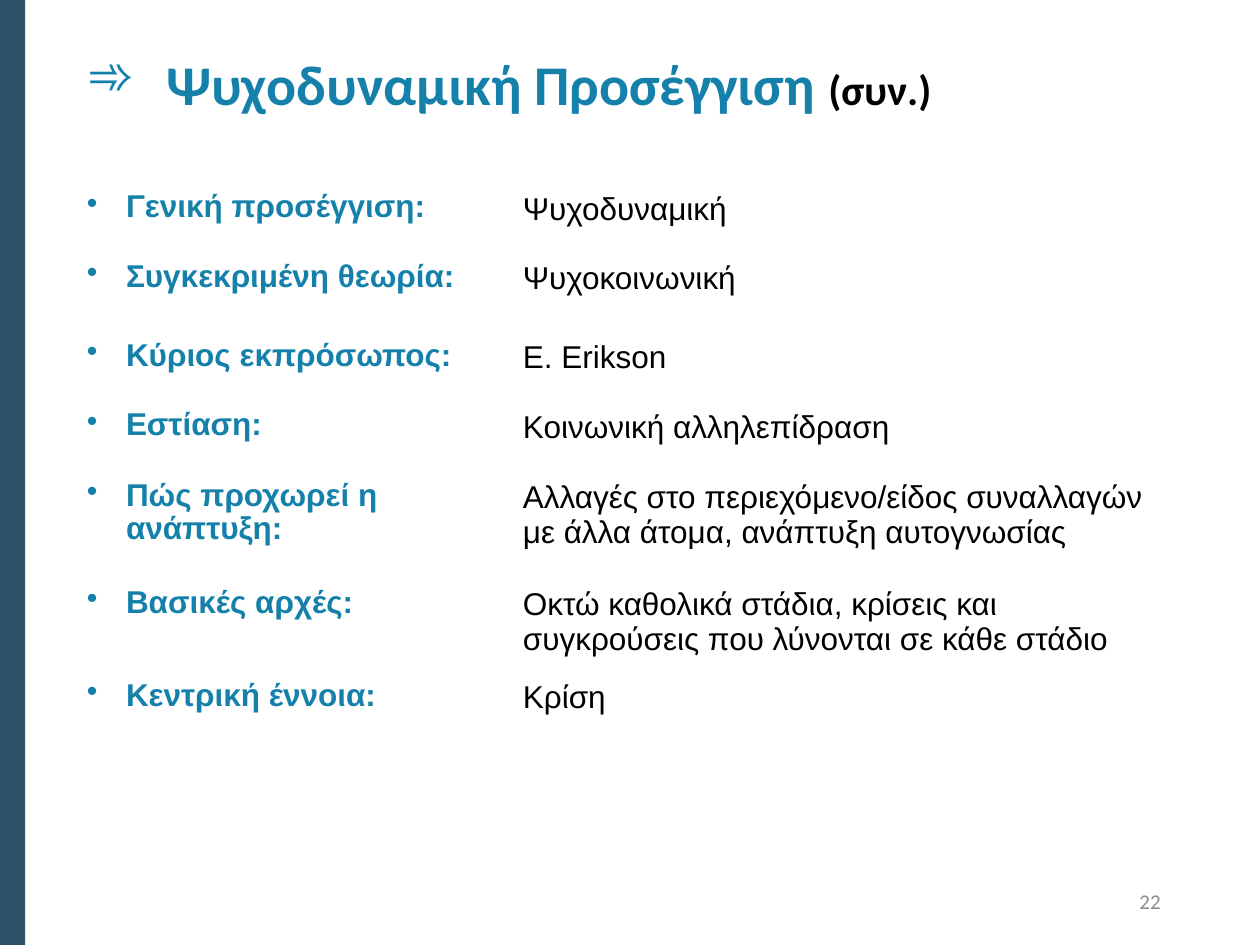
"""Build a slide that sums up the psychodynamic approach in a table."""
from lxml import etree
from pptx import Presentation, util as u
from pptx.dml.color import RGBColor
from pptx.enum import shapes, text
from pptx.oxml.ns import qn

HUES = {"bar": "2E5369", "key": "1581AA", "ink": "000000", "page": "8C8C8C"}
TITLE = [("Ψυχοδυναμική Προσέγγιση ", 32, "key"), ("(συν.)", 24, "ink")]
PAGE = "22"
COLS = [3.46, 5.28]
ROWS = [
    (0.55, "Γενική προσέγγιση:", "Ψυχοδυναμική"),
    (0.63, "Συγκεκριμένη θεωρία:", "Ψυχοκοινωνική"),
    (0.55, "Κύριος εκπρόσωπος:", "E. Erikson"),
    (0.56, "Εστίαση:", "Κοινωνική αλληλεπίδραση"),
    (0.85, "Πώς προχωρεί η ανάπτυξη:",
     "Αλλαγές στο περιεχόμενο/είδος συναλλαγών με άλλα άτομα, ανάπτυξη αυτογνωσίας"),
    (0.74, "Βασικές αρχές:",
     "Οκτώ καθολικά στάδια, κρίσεις και συγκρούσεις που λύνονται σε κάθε στάδιο"),
    (0.74, "Κεντρική έννοια:", "Κρίση"),
]


def style(font, name, size, hue, bold=False):
    font.name, font.size, font.bold = name, u.Pt(size), bold
    font.color.rgb = RGBColor.from_string(HUES[hue])


def bullet(para, char, indent):
    props = para._p.get_or_add_pPr()
    props.set("marL", str(u.Inches(indent)))
    props.set("indent", str(-u.Inches(indent)))
    mark = etree.Element(qn("a:buChar"), char=char)
    props.insert_element_before(mark, "a:tabLst", "a:defRPr", "a:extLst")


def add_box(slide, *place, anchor):
    frame = slide.shapes.add_textbox(*map(u.Inches, place)).text_frame
    frame.word_wrap = True
    frame.vertical_anchor = anchor
    return frame.paragraphs[0]


def add_bar(slide, height):
    bar = slide.shapes.add_shape(
        shapes.MSO_SHAPE.RECTANGLE, 0, 0, u.Inches(0.2), height)
    bar.shadow.inherit = False
    bar.fill.solid()
    bar.fill.fore_color.rgb = RGBColor.from_string(HUES["bar"])
    bar.line.fill.background()


def add_title(slide):
    para = add_box(slide, 0.6, 0.34, 8.74, 0.97, anchor=text.MSO_ANCHOR.TOP)
    for words, size, hue in TITLE:
        run = para.add_run()
        run.text = words
        style(run.font, "Calibri", size, hue, True)
    bullet(para, "➾", 0.62)


def add_facts(slide):
    place = 0.59, 1.47, sum(COLS), sum(row[0] for row in ROWS)
    table = slide.shapes.add_table(
        len(ROWS), len(COLS), *map(u.Inches, place)).table
    table.first_row = table.horz_banding = False
    for col, width in zip(table.columns, COLS):
        col.width = u.Inches(width)
    for row, (height, *words) in zip(table.rows, ROWS):
        row.height = u.Inches(height)
        for cell, label, is_key in zip(row.cells, words, (True, False)):
            cell.fill.background()
            cell.text = label
            para = cell.text_frame.paragraphs[0]
            style(para.font, "Arial", 18, "key" if is_key else "ink", is_key)
            if is_key:
                para.line_spacing = 0.93
                bullet(para, "•", 0.31)


def add_page(slide):
    para = add_box(slide, 7.06, 6.95, 2.25, 0.4, anchor=text.MSO_ANCHOR.MIDDLE)
    para.text = PAGE
    para.alignment = text.PP_ALIGN.RIGHT
    style(para.font, "Calibri", 12, "page")


def main():
    deck = Presentation()
    deck.slide_width, deck.slide_height = u.Inches(10), u.Inches(7.5)
    slide = deck.slides.add_slide(deck.slide_layouts[6])
    add_bar(slide, deck.slide_height)
    add_title(slide)
    add_facts(slide)
    add_page(slide)
    deck.save("out.pptx")


if __name__ == "__main__":
    main()
